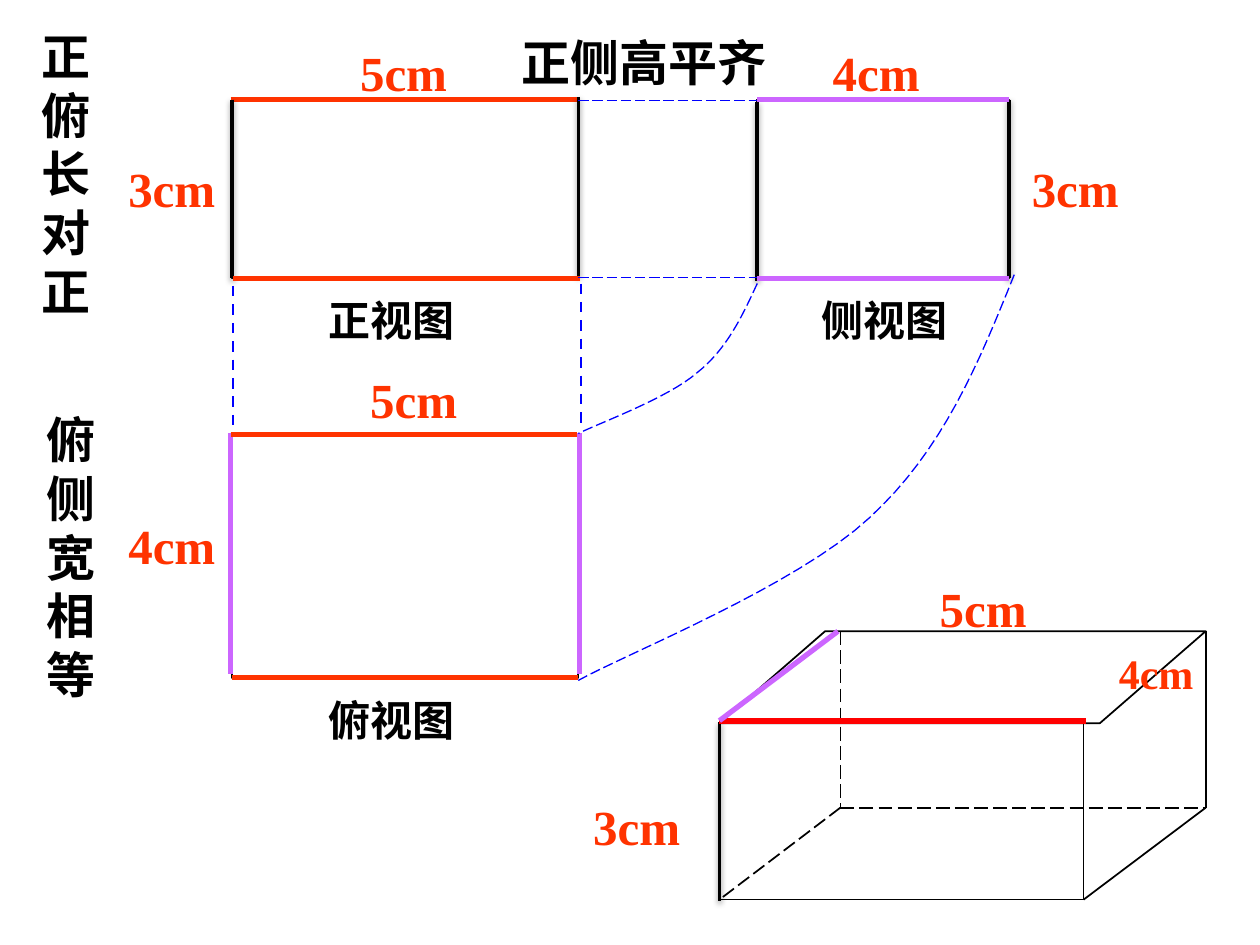
"""Three views of a 5 x 4 x 3 cm box with the rules that link their lengths."""
import dataclasses

import lxml.etree
import pptx
import pptx.dml.color
import pptx.enum.dml
import pptx.enum.shapes
import pptx.enum.text
import pptx.oxml.ns
import pptx.util

PX = 9144
DASH = pptx.enum.dml.MSO_LINE.DASH
LONG_DASH = pptx.enum.dml.MSO_LINE.LONG_DASH
CENTER = pptx.enum.text.PP_ALIGN.CENTER
SHAPES = pptx.enum.shapes.MSO_SHAPE


@dataclasses.dataclass(frozen=True)
class Theme:
    font: str = "Times New Roman"
    ink: str = "000000"
    length: str = "FF3300"
    width: str = "CC66FF"
    box_length: str = "FF0000"
    guide: str = "0000FF"
    large: int = 28
    small: int = 24
    thin: float = 0.75
    outline: float = 1
    dashed: float = 1.5
    height_edge: float = 2
    edge: float = 3
    box_edge: float = 3.25


def child(parent, tag, **attributes):
    element = lxml.etree.SubElement(parent, pptx.oxml.ns.qn(tag))
    for key, value in attributes.items():
        element.set(key, str(value))
    return element


def bezier(start, first, second, end, steps=16):
    for step in range(1, steps + 1):
        t = step / steps
        weights = ((1 - t) ** 3, 3 * t * (1 - t) ** 2, 3 * t * t * (1 - t), t ** 3)
        yield tuple(
            round(PX * sum(w * value for w, value in zip(weights, axis)))
            for axis in zip(start, first, second, end)
        )


class Drawing:
    def __init__(self, slide, theme):
        self.slide = slide
        self.theme = theme

    def stroke(self, line, color, weight, dash=None):
        line.color.rgb = pptx.dml.color.RGBColor.from_string(color)
        line.width = pptx.util.Pt(weight)
        if dash is not None:
            line.dash_style = dash

    def outline(self, kind, left, top, width, height):
        shape = self.slide.shapes.add_shape(
            kind, *(PX * value for value in (left, top, width, height)))
        shape.shadow.inherit = False
        shape.fill.background()
        self.stroke(shape.line, self.theme.ink, self.theme.outline)
        return shape

    def line(self, x1, y1, x2, y2, color, weight, dash=None, shadow=False):
        connector = self.slide.shapes.add_connector(
            pptx.enum.shapes.MSO_CONNECTOR.STRAIGHT,
            *(PX * value for value in (x1, y1, x2, y2)))
        self.stroke(connector.line, color, weight, dash)
        effects = child(connector._element.spPr, "a:effectLst")
        if shadow:
            outer = child(effects, "a:outerShdw", blurRad=40000, dist=20000,
                          dir=5400000, rotWithShape=0)
            tint = child(outer, "a:srgbClr", val=self.theme.ink)
            child(tint, "a:alpha", val=38000)

    def height_edge(self, x, top, bottom):
        self.line(x, top, x, bottom, self.theme.ink, self.theme.height_edge, shadow=True)

    def curve(self, start, *segments):
        builder = self.slide.shapes.build_freeform(*(PX * value for value in start))
        for segment in segments:
            builder.add_line_segments(list(bezier(start, *segment)), close=False)
            start = segment[-1]
        shape = builder.convert_to_shape()
        shape.shadow.inherit = False
        shape.fill.background()
        self.stroke(shape.line, self.theme.guide, self.theme.thin, LONG_DASH)

    def label(self, text, left, top, width, height, *, size=None, color=None,
              align=None, wrap=True):
        box = self.slide.shapes.add_textbox(
            *(PX * value for value in (left, top, width, height)))
        frame = box.text_frame
        frame.word_wrap = wrap
        frame.auto_size = pptx.enum.text.MSO_AUTO_SIZE.SHAPE_TO_FIT_TEXT
        paragraph = frame.paragraphs[0]
        if align is not None:
            paragraph.alignment = align
        before = child(paragraph._p.get_or_add_pPr(), "a:spcBef")
        child(before, "a:spcPct", val=50000)
        run = paragraph.add_run()
        run.text = text
        run.font.name = self.theme.font
        run.font.bold = True
        run.font.size = pptx.util.Pt(size or self.theme.large)
        run.font.color.rgb = pptx.dml.color.RGBColor.from_string(color or self.theme.ink)


def draw_box(drawing):
    theme = drawing.theme
    drawing.outline(SHAPES.RECTANGLE, 571, 574, 289, 140)
    lid = drawing.outline(SHAPES.PARALLELOGRAM, 571, 501, 386, 73)
    lid.adjustments[0] = 1.15
    for ends in ((957, 641, 860, 714), (957, 501, 957, 641)):
        drawing.line(*ends, theme.ink, theme.outline)
    for hidden in ((667, 641, 571, 714), (667, 501, 667, 641), (667, 641, 957, 641)):
        drawing.line(*hidden, theme.ink, theme.outline, LONG_DASH)


def draw_views(drawing):
    theme = drawing.theme
    for text, *place in (
        ("5cm", 276, 29, 167), ("3cm", 92, 121, 100), ("3cm", 809, 121, 108),
        ("4cm", 651, 29, 125), ("5cm", 284, 288, 150), ("4cm", 92, 404, 108),
    ):
        drawing.label(text, *place, 57, color=theme.length)
    for name, view, caption in (
        ("正视图", (184, 79, 275, 142), (251, 229, 183)),
        ("侧视图", (601, 79, 200, 142), (642, 229, 133)),
        ("俯视图", (184, 346, 275, 192), (251, 546, 142)),
    ):
        drawing.outline(SHAPES.RECTANGLE, *view)
        drawing.label(name, *caption, 50, size=theme.small)


def draw_edges(drawing):
    theme = drawing.theme
    for left, y in ((183, 79), (184, 538)):
        drawing.line(left, y, left + 275, y, theme.length, theme.edge)
    for x in (184, 801):
        drawing.height_edge(x, 79, 221)
    drawing.line(601, 79, 801, 79, theme.width, theme.edge)
    drawing.line(183, 344, 183, 535, theme.width, theme.edge)
    drawing.label("正侧高平齐", 404, 21, 242, 57)
    drawing.label("俯侧宽相等", 27, 320, 79, 244)
    drawing.label("正俯长对正", 23, 16, 79, 244)
    for x, top in ((459, 77), (601, 81)):
        drawing.height_edge(x, top, top + 142)
    for left, y in ((185, 221), (183, 345)):
        drawing.line(left, y, left + 275, y, theme.length, theme.edge)
    drawing.line(460, 344, 460, 535, theme.width, theme.edge)
    drawing.line(601, 221, 801, 221, theme.width, theme.edge)


def draw_guides(drawing):
    theme = drawing.theme
    for x, top, bottom in ((185, 227, 337), (461, 225, 336)):
        drawing.line(x, top, x, bottom, theme.guide, theme.dashed, DASH)
    for y in (80, 220):
        drawing.line(459, y, 601, y, theme.guide, theme.thin, LONG_DASH)
    drawing.curve((601, 225), ((589, 251), (577, 277), (553, 296)),
                  ((530, 316), (475, 336), (459, 344)))
    drawing.curve((805, 218), ((777, 288), (748, 358), (690, 411)),
                  ((632, 465), (497, 519), (459, 540)))


def draw_box_lengths(drawing):
    theme = drawing.theme
    drawing.height_edge(571, 573, 715)
    drawing.line(571, 572, 862, 572, theme.box_length, theme.box_edge)
    drawing.line(571, 572, 665, 501, theme.width, theme.edge)
    drawing.label("5cm", 736, 454, 125, 57, color=theme.length)
    drawing.label("3cm", 461, 627, 100, 57, color=theme.length)
    drawing.label("4cm", 878, 509, 79, 50, size=theme.small, color=theme.length,
                  align=CENTER, wrap=False)


def main():
    deck = pptx.Presentation()
    deck.slide_width = 1000 * PX
    deck.slide_height = 750 * PX
    drawing = Drawing(deck.slides.add_slide(deck.slide_layouts[6]), Theme())
    for draw in (draw_box, draw_views, draw_edges, draw_guides, draw_box_lengths):
        draw(drawing)
    deck.save("out.pptx")


if __name__ == "__main__":
    main()
